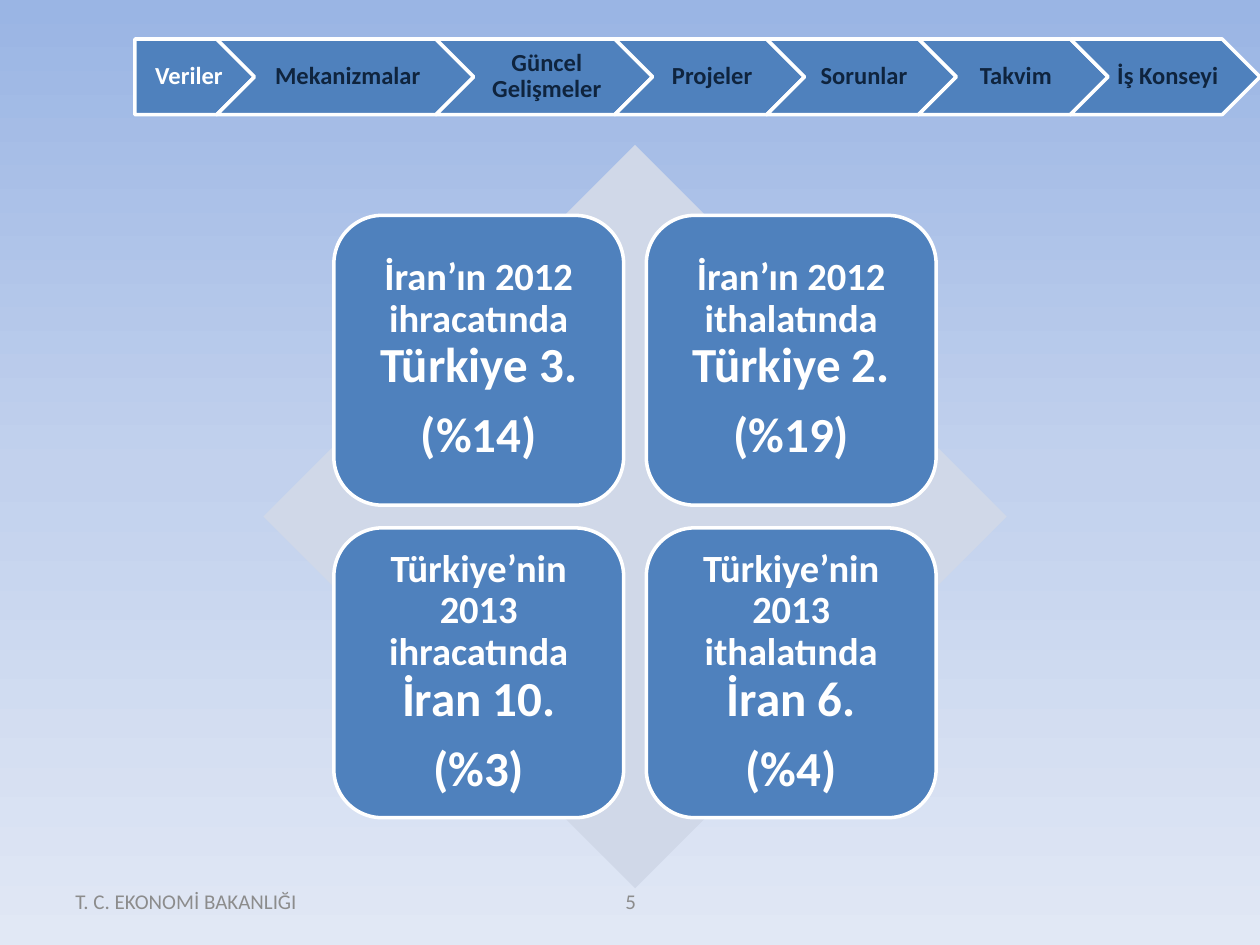
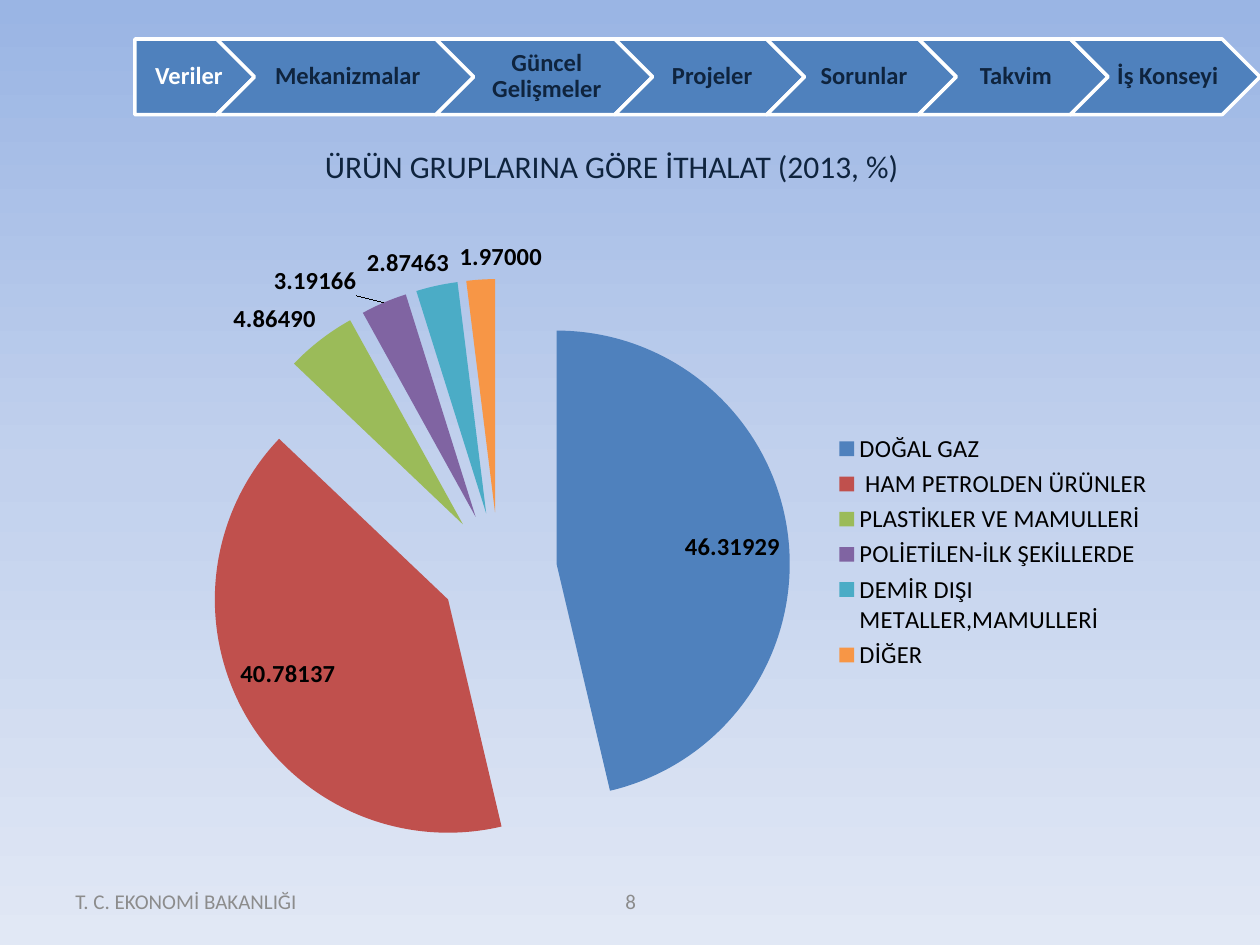
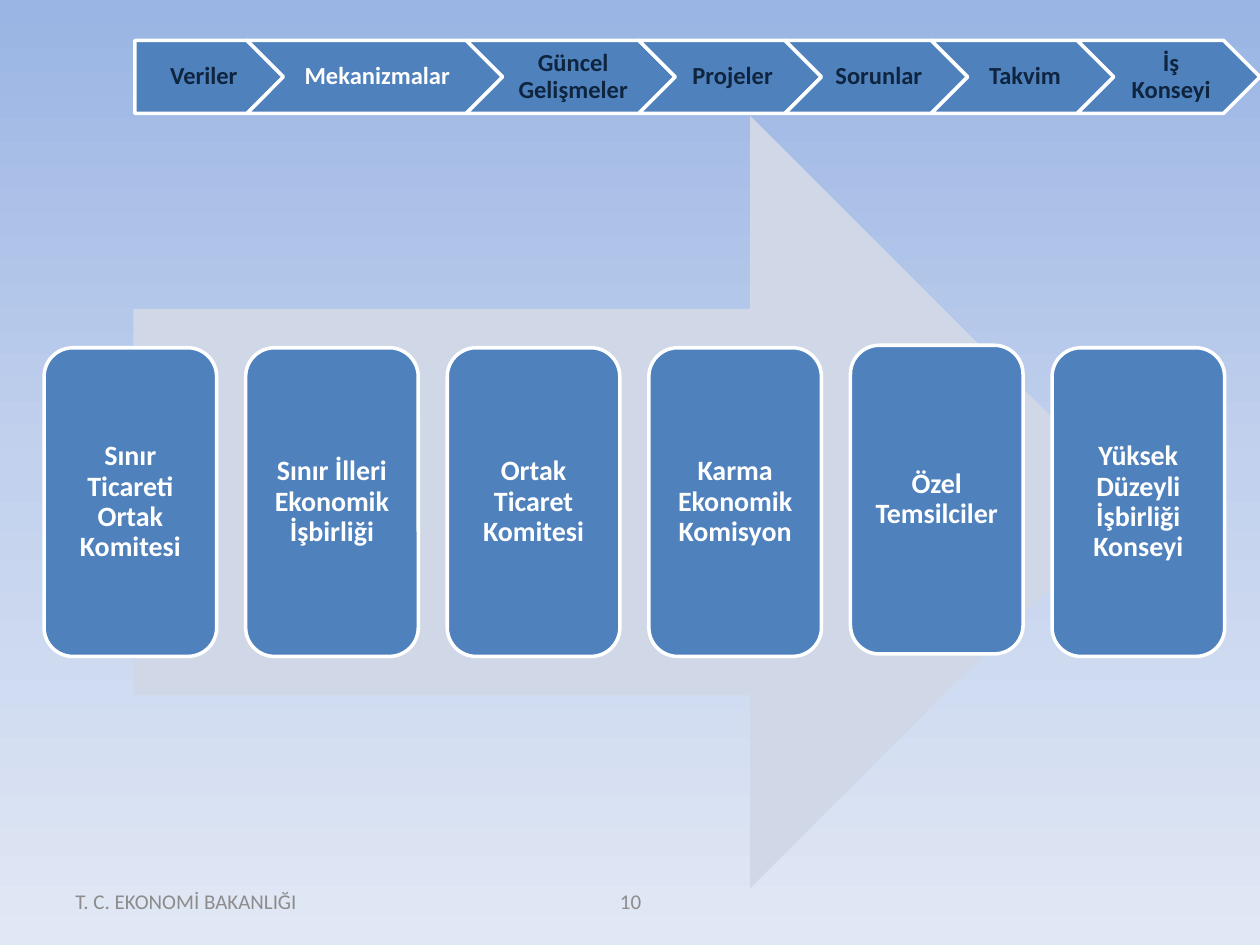
from copy import deepcopy

from pptx import Presentation
from pptx.chart.data import CategoryChartData
from pptx.dml.color import RGBColor
from pptx.enum.chart import XL_CHART_TYPE, XL_LABEL_POSITION, XL_LEGEND_POSITION
from pptx.enum.shapes import MSO_SHAPE
from pptx.enum.text import MSO_ANCHOR, PP_ALIGN
from pptx.oxml.ns import qn
from pptx.oxml.xmlchemy import OxmlElement
from pptx.util import Inches, Pt

FONT = "Calibri"
COLORS = {
    "blue": "4F81BD", "pale": "D0D8E8", "white": "FFFFFF",
    "navy": "0F243E", "gray": "8C8C8C", "black": "000000",
}
BACKGROUND = ["9AB5E4", "C2D1ED", "E1E8F5"]
PIE_COLORS = ["4F81BD", "C0504D", "9BBB59", "8064A2", "4BACC6", "F79646"]
SECTIONS = ["Veriler", "Mekanizmalar", "Güncel Gelişmeler", "Projeler",
            "Sorunlar", "Takvim", "İş Konseyi"]
RANKINGS = [
    ("İran’ın 2012 ihracatında ", "Türkiye 3.", "(%14)"),
    ("İran’ın 2012 ithalatında ", "Türkiye 2.", "(%19)"),
    ("Türkiye’nin 2013 ihracatında ", "İran 10.", "(%3)"),
    ("Türkiye’nin 2013 ithalatında ", "İran 6.", "(%4)"),
]
IMPORTS = {
    "DOĞAL GAZ": 46.31929,
    " HAM PETROLDEN ÜRÜNLER": 40.78137,
    "PLASTİKLER VE MAMULLERİ": 4.8649,
    "POLİETİLEN-İLK ŞEKİLLERDE": 3.19166,
    "DEMİR DIŞI METALLER,MAMULLERİ": 2.87463,
    "DİĞER": 1.97,
}
MECHANISMS = [
    "Sınır Ticareti Ortak Komitesi", "Sınır İlleri Ekonomik İşbirliği",
    "Ortak Ticaret Komitesi", "Karma Ekonomik Komisyon",
    "Özel Temsilciler", "Yüksek Düzeyli İşbirliği Konseyi",
]


def rgb(value):
    return RGBColor.from_string(value)


def style_font(font, size, color, bold=False):
    font.name, font.size, font.bold = FONT, Pt(size), bold
    font.color.rgb = rgb(color)


def set_background(master):
    fill = master.background.fill
    fill.gradient()
    fill.gradient_angle = 270
    stops = master.element.find(".//" + qn("a:gsLst"))
    stops.append(deepcopy(stops[0]))
    for index, (stop, color) in enumerate(zip(fill.gradient_stops, BACKGROUND)):
        stop.position = index / 2
        stop.color.rgb = rgb(color)


def add_block(page, kind, box, color, outlined=True):
    block = page.shapes.add_shape(kind, *map(Inches, box))
    block.shadow.inherit = False
    block.fill.solid()
    block.fill.fore_color.rgb = rgb(color)
    if outlined:
        block.line.color.rgb = rgb(COLORS["white"])
        block.line.width = Pt(2)
    else:
        block.line.fill.background()
    return block


def write_block(block, paragraphs, insets, size, color=COLORS["white"]):
    """Fill a block with paragraphs, each a list of (text, size or None) runs."""
    frame = block.text_frame
    frame.word_wrap = True
    frame.vertical_anchor = MSO_ANCHOR.MIDDLE
    (frame.margin_left, frame.margin_top,
     frame.margin_right, frame.margin_bottom) = map(Inches, insets)
    for index, runs in enumerate(paragraphs):
        para = frame.add_paragraph() if index else frame.paragraphs[0]
        para.alignment = PP_ALIGN.CENTER
        para.line_spacing = 0.9
        para.space_after = Pt(size * 0.35)
        style_font(para.font, size, color, bold=True)
        for text, run_size in runs:
            span = para.add_run()
            span.text = text
            if run_size:
                span.font.size = Pt(run_size)


def add_label(page, box, text, size, color, align=PP_ALIGN.LEFT,
              anchor=MSO_ANCHOR.MIDDLE):
    frame = page.shapes.add_textbox(*map(Inches, box)).text_frame
    frame.word_wrap = True
    frame.vertical_anchor = anchor
    para = frame.paragraphs[0]
    para.text = text
    para.alignment = align
    style_font(para.font, size, color)


def add_navigation(page, box, first_widths, current):
    """Draw the section chevrons; those without a given width share the rest."""
    left, top, width, height = box
    overlap = height / 2
    shared = len(SECTIONS) - len(first_widths)
    rest = width - sum(first_widths) + overlap * (len(SECTIONS) - 1)
    widths = first_widths + [rest / shared] * shared
    for index, (section, step_width) in enumerate(zip(SECTIONS, widths)):
        kind = MSO_SHAPE.CHEVRON if index else MSO_SHAPE.PENTAGON
        step = add_block(page, kind, (left, top, step_width, height), COLORS["blue"])
        color = COLORS["white" if section == current else "navy"]
        insets = (0.06 if index else 0.08, 0.04, 0.02, 0.04)
        write_block(step, [[(section, None)]], insets, 14, color)
        left += step_width - overlap


def add_footer(page, number):
    add_label(page, (0.5, 6.95, 2.33, 0.4), "T. C. EKONOMİ BAKANLIĞI", 12, COLORS["gray"])
    add_label(page, (3.42, 6.95, 3.17, 0.4), str(number), 12, COLORS["gray"],
              PP_ALIGN.CENTER)


def add_ranking_matrix(page, box):
    left, top, width, height = box
    add_block(page, MSO_SHAPE.DIAMOND, box, COLORS["pale"], outlined=False)
    side, gap = 2.3, 0.18
    margin_x = (width - 2 * side - gap) / 2
    margin_y = (height - 2 * side - gap) / 2
    for index, (context, rank, share) in enumerate(RANKINGS):
        row, column = divmod(index, 2)
        card = add_block(page, MSO_SHAPE.ROUNDED_RECTANGLE,
                         (left + margin_x + column * (side + gap),
                          top + margin_y + row * (side + gap), side, side),
                         COLORS["blue"])
        write_block(card, [[(context, 22), (rank, None)], [(share, None)]],
                    [0.09] * 4, 28)


def add_import_pie(page, box):
    data = CategoryChartData(number_format="#.##000")
    data.categories = list(IMPORTS)
    data.add_series("Series 1", list(IMPORTS.values()))
    chart = page.shapes.add_chart(XL_CHART_TYPE.PIE, *map(Inches, box), data).chart
    style_font(chart.font, 10, COLORS["black"])
    chart.has_title = False
    chart.has_legend = True
    chart.legend.position = XL_LEGEND_POSITION.RIGHT
    chart.legend.include_in_layout = False
    style_font(chart.legend.font, 14, COLORS["black"])

    explosion = OxmlElement("c:explosion")
    explosion.set("val", "25")
    chart.element.find(".//" + qn("c:tx")).addnext(explosion)

    plot = chart.plots[0]
    plot.vary_by_categories = True
    series = plot.series[0]
    for index, color in enumerate(PIE_COLORS):
        fill = series.points[index].format.fill
        fill.solid()
        fill.fore_color.rgb = rgb(color)
    labels = series.data_labels
    labels.show_value = True
    labels.number_format = "#.##000"
    labels.number_format_is_linked = False
    labels.position = XL_LABEL_POSITION.BEST_FIT
    style_font(labels.font, 14, COLORS["black"], bold=True)


def add_mechanism_arrow(page, box):
    left, top, _, height = box
    add_block(page, MSO_SHAPE.RIGHT_ARROW, box, COLORS["pale"], outlined=False)
    card_width, card_height, pitch = 1.37, 2.45, 1.6
    card_top = top + (height - card_height) / 2
    for index, name in enumerate(MECHANISMS):
        lift = 0.02 if name == "Özel Temsilciler" else 0
        card = add_block(page, MSO_SHAPE.ROUNDED_RECTANGLE,
                         (left - 0.71 + index * pitch, card_top - lift,
                          card_width, card_height), COLORS["blue"])
        write_block(card, [[(name, None)]], [0.07] * 4, 16)


def main():
    deck = Presentation()
    deck.slide_width, deck.slide_height = Inches(10), Inches(7.5)
    set_background(deck.slide_master)
    ranking_page, import_page, mechanism_page = [
        deck.slides.add_slide(deck.slide_layouts[6]) for _ in range(3)]

    add_footer(ranking_page, 5)
    add_ranking_matrix(ranking_page, (2.09, 1.15, 5.9, 5.9))

    add_footer(import_page, 8)
    add_label(import_page, (2.48, 1.12, 4.88, 0.37),
              "ÜRÜN GRUPLARINA GÖRE İTHALAT (2013, %)", 18, COLORS["navy"],
              anchor=MSO_ANCHOR.TOP)
    add_import_pie(import_page, (1.06, 1.78, 8.19, 5.2))

    for page in (ranking_page, import_page):
        add_navigation(page, (1.07, 0.31, 8.93, 0.6), [0.95, 2.04, 1.72], "Veriler")

    add_footer(mechanism_page, 10)
    add_mechanism_arrow(mechanism_page, (1.06, 0.92, 7.96, 6.13))
    add_navigation(mechanism_page, (1.07, 0.32, 8.93, 0.58), [1.18, 2.03, 1.66],
                   "Mekanizmalar")
    deck.save("out.pptx")


if __name__ == "__main__":
    main()
